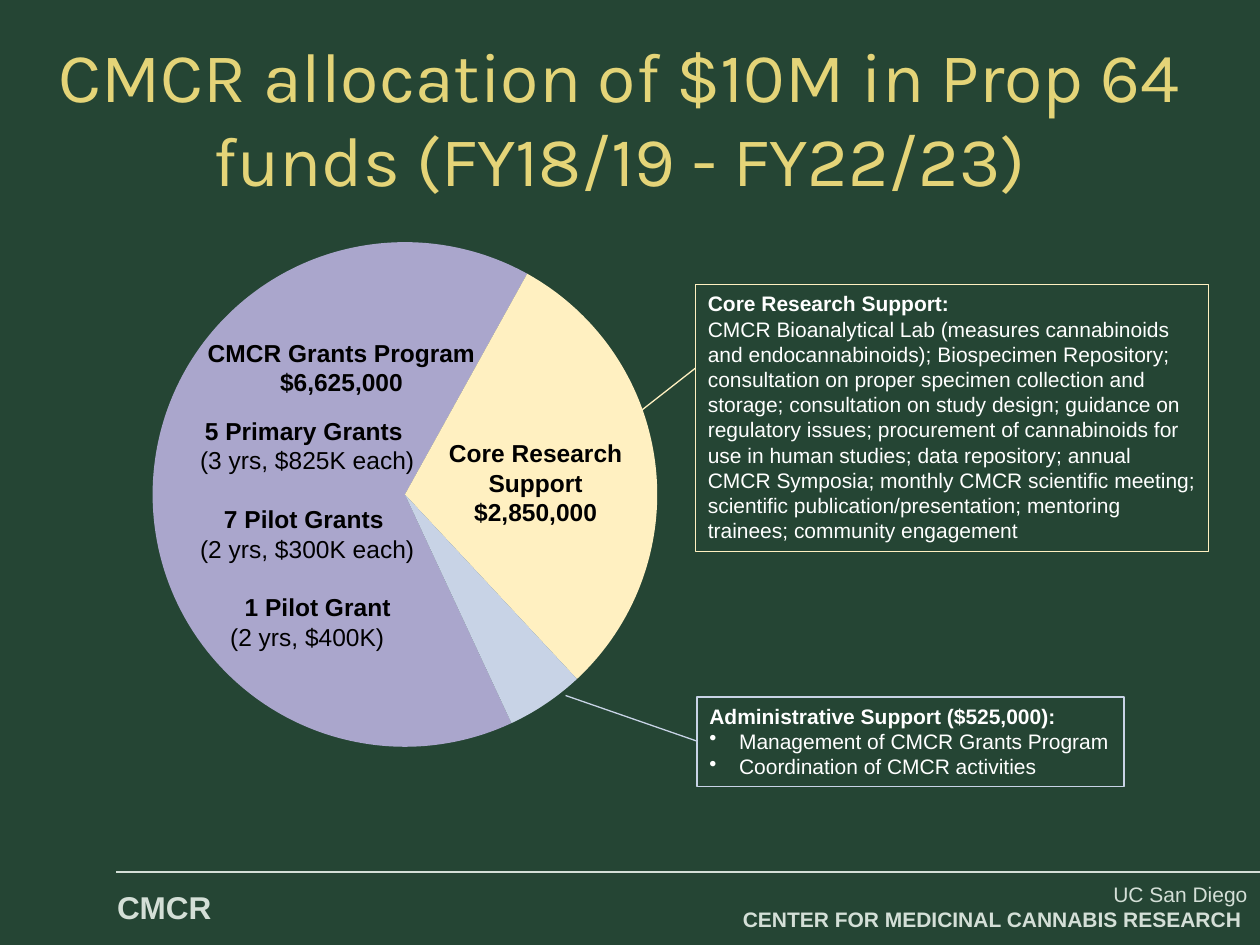
from dataclasses import dataclass
from typing import Optional

from lxml.etree import SubElement
from pptx import Presentation
from pptx.chart.data import CategoryChartData
from pptx.dml.color import RGBColor
from pptx.enum.chart import XL_CHART_TYPE as ChartType
from pptx.enum.shapes import MSO_CONNECTOR as Connector, MSO_SHAPE as Shape
from pptx.enum.text import MSO_ANCHOR as Anchor, PP_ALIGN as Align
from pptx.oxml import parse_xml
from pptx.oxml.ns import nsdecls, qn
from pptx.util import Cm, Pt

GREEN = RGBColor(0x25, 0x45, 0x34)
GOLD = RGBColor(0xE4, 0xD4, 0x78)
SAGE = RGBColor(0xD4, 0xDF, 0xD7)
LAVENDER = RGBColor(0xAA, 0xA6, 0xCC)
CREAM = RGBColor(0xFF, 0xF0, 0xC1)
PALE_BLUE = RGBColor(0xC8, 0xD3, 0xE6)
WHITE = RGBColor(0xFF, 0xFF, 0xFF)
BLACK = RGBColor(0, 0, 0)


@dataclass
class Line:
    text: str
    bold: bool = False
    gap: float = 0
    indent: float = 0
    bullet: bool = False


@dataclass
class Block:
    box: tuple[float, float, float, float]
    lines: list[Line]
    size: int = 14
    color: RGBColor = BLACK
    align: Align = Align.CENTER
    anchor: Anchor = Anchor.TOP
    font: str = "Arial"
    border: Optional[RGBColor] = None


@dataclass
class Rule:
    start: tuple[float, float]
    end: tuple[float, float]
    color: RGBColor
    width: float = 0.75


BLOCKS = [
    Block((2.11, 17.78, 2.6, 1.02), [Line("CMCR", True)], 18, SAGE, Align.LEFT),
    Block((7.82, 17.65, 17.58, 1.27),
          [Line("UC San Diego"), Line("CENTER FOR MEDICINAL CANNABIS RESEARCH ", True)],
          12, SAGE, Align.RIGHT, Anchor.MIDDLE),
    Block((8.69, 8.71, 4.22, 2.06),
          [Line("Core Research Support", True), Line("$2,850,000", True)]),
    Block((3.81, 6.68, 6.15, 1.45),
          [Line("CMCR Grants Program", True), Line("$6,625,000", True)]),
    Block((14.02, 5.74, 10.34, 5.38),
          [Line("Core Research Support:", True),
           Line("CMCR Bioanalytical Lab (measures cannabinoids and endocannabinoids); "
                "Biospecimen Repository; consultation on proper specimen collection and "
                "storage; consultation on study design; guidance on regulatory issues; "
                "procurement of cannabinoids for use in human studies; data repository; "
                "annual CMCR Symposia; monthly CMCR scientific meeting; scientific "
                "publication/presentation; mentoring trainees; community engagement")],
          12, WHITE, Align.LEFT, border=CREAM),
    Block((14.05, 14.05, 8.61, 1.8),
          [Line("Administrative Support ($525,000):", True),
           Line("Management of CMCR Grants Program", indent=0.6, bullet=True),
           Line("Coordination of CMCR activities", indent=0.6, bullet=True)],
          12, WHITE, Align.LEFT, border=PALE_BLUE),
    Block((3.58, 8.26, 5.23, 5.05),
          [Line("5 Primary Grants ", True), Line("(3 yrs, $825K each)"),
           Line("7 Pilot Grants ", True, gap=16.8), Line("(2 yrs, $300K each)"),
           Line("1 Pilot Grant", True, gap=16.8, indent=0.42), Line("(2 yrs, $400K)")]),
    Block((0, 0.76, 24.97, 3.18),
          [Line("CMCR allocation of $10M in Prop 64 funds (FY18/19 - FY22/23)")],
          40, GOLD, anchor=Anchor.MIDDLE, font="Karla"),
]

RULES = [
    Rule((2.34, 17.58), (25.4, 17.58), SAGE, 1),
    Rule((12.04, 8.97), (14.02, 7.42), CREAM),
    Rule((11.4, 14.02), (14.05, 14.94), PALE_BLUE),
]


def add_block(shapes, block: Block) -> None:
    box = [Cm(length) for length in block.box]
    if block.border is None:
        holder = shapes.add_textbox(*box)
    else:
        holder = shapes.add_shape(Shape.RECTANGLE, *box)
        holder.shadow.inherit = False
        holder.fill.background()
        holder.line.color.rgb = block.border
        holder.line.width = Pt(0.75)
    frame = holder.text_frame
    frame.word_wrap = True
    frame.vertical_anchor = block.anchor
    for index, line in enumerate(block.lines):
        paragraph = frame.add_paragraph() if index else frame.paragraphs[0]
        paragraph.text = line.text
        paragraph.alignment = block.align
        if line.gap:
            paragraph.space_before = Pt(line.gap)
        properties = paragraph._p.get_or_add_pPr()
        if line.indent:
            properties.set("marL", str(Cm(line.indent)))
        if line.bullet:
            properties.set("indent", str(-Cm(line.indent)))
            SubElement(properties, qn("a:buChar"), char="•")
        font = paragraph.font
        font.name, font.size, font.bold = block.font, Pt(block.size), line.bold
        font.color.rgb = block.color


def add_rule(shapes, rule: Rule) -> None:
    ends = [Cm(length) for length in rule.start + rule.end]
    connector = shapes.add_connector(Connector.STRAIGHT, *ends)
    connector.line.color.rgb = rule.color
    connector.line.width = Pt(rule.width)
    SubElement(connector._element.spPr, qn("a:effectLst"))


def add_allocation_pie(shapes) -> None:
    shares = CategoryChartData()
    shares.categories = ["1", "2", "3"]
    shares.add_series("Series 1", (65, 30, 5))
    chart = shapes.add_chart(ChartType.PIE, Cm(1.07), Cm(4.52), Cm(14.33), Cm(10.9),
                             shares).chart
    chart.has_legend = False
    chart.has_title = False
    chart.font.name, chart.font.size = "Arial", Pt(10)
    chart.font.color.rgb = WHITE
    pie = chart.plots[0]
    pie.vary_by_categories = True
    for index, color in enumerate((LAVENDER, CREAM, PALE_BLUE)):
        wedge = pie.series[0].points[index].format
        wedge.fill.solid()
        wedge.fill.fore_color.rgb = color
        wedge.line.fill.background()
    pie_xml = pie._element
    angle = pie_xml.find(qn("c:firstSliceAng"))
    if angle is None:
        angle = SubElement(pie_xml, qn("c:firstSliceAng"))
    angle.set("val", "155")
    plot_area = pie_xml.getparent()
    for layout in plot_area.findall(qn("c:layout")):
        plot_area.remove(layout)
    plot_area.insert(0, parse_xml(
        f'<c:layout {nsdecls("c")}><c:manualLayout><c:layoutTarget val="inner"/>'
        '<c:xMode val="edge"/><c:yMode val="edge"/><c:x val="0.14"/><c:y val="0.03"/>'
        '<c:w val="0.71"/><c:h val="0.94"/></c:manualLayout></c:layout>'))


def main() -> None:
    deck = Presentation()
    deck.slide_width, deck.slide_height = Cm(25.4), Cm(19.05)
    slide = deck.slides.add_slide(deck.slide_layouts[6])
    slide.background.fill.solid()
    slide.background.fill.fore_color.rgb = GREEN
    add_allocation_pie(slide.shapes)
    for block in BLOCKS:
        add_block(slide.shapes, block)
    for rule in RULES:
        add_rule(slide.shapes, rule)
    deck.save("out.pptx")


if __name__ == "__main__":
    main()
